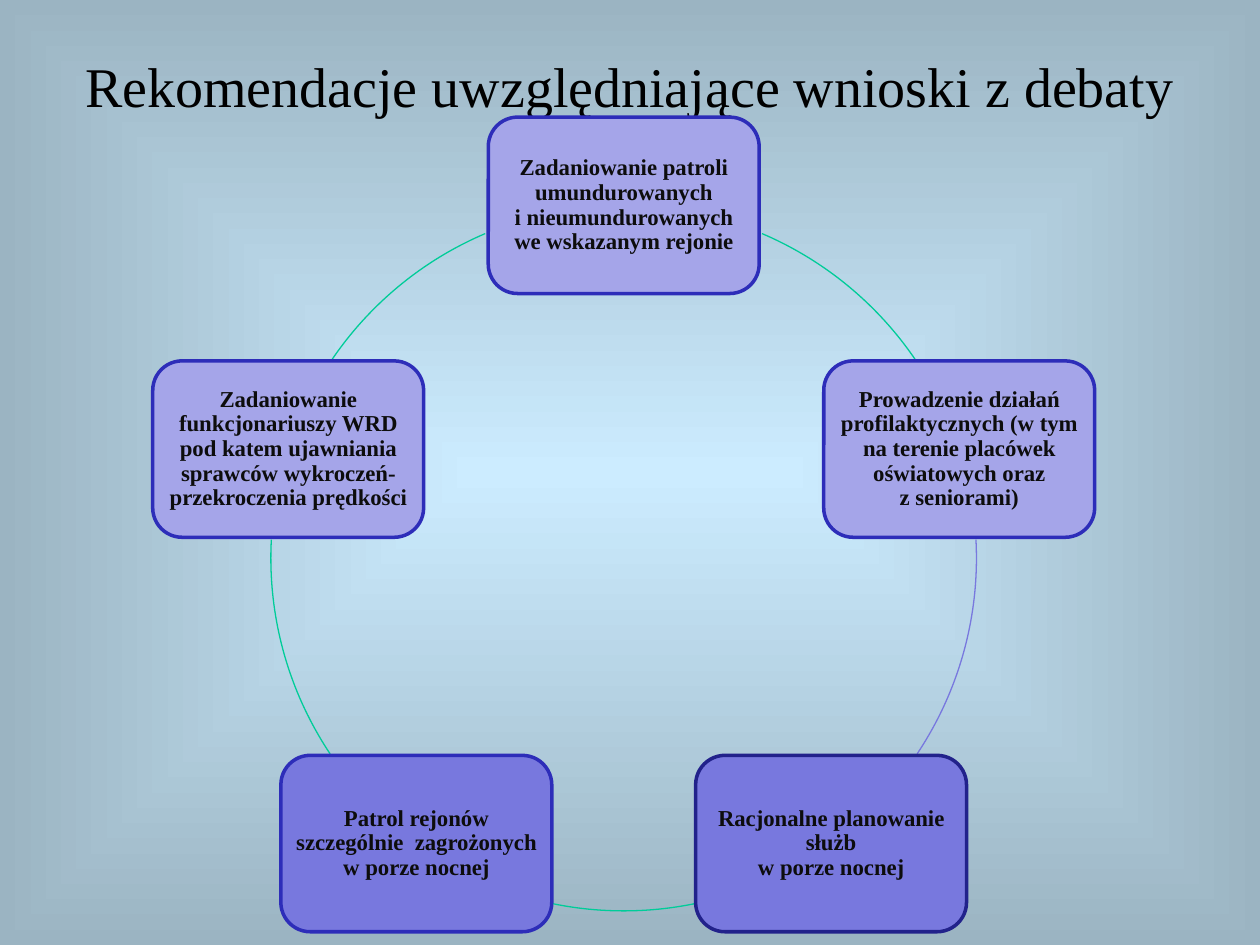
import math

import lxml.etree
import pptx
import pptx.dml.color
import pptx.enum.shapes
import pptx.enum.text
import pptx.oxml.ns
import pptx.util

Inches = pptx.util.Inches
Pt = pptx.util.Pt
SHAPE = pptx.enum.shapes.MSO_SHAPE
ANCHOR = pptx.enum.text.MSO_ANCHOR

FONT = "Times New Roman"
CENTER_X, CENTER_Y, RADIUS = 4.95, 4.43, 2.8
BOX_W, BOX_H = 2.15, 1.4
LIGHT, MEDIUM = "A5A5E9", "7878DE"
BLUE, NAVY, GREEN = "2D2DB9", "22228B", "00CC99"

# Clockwise from the top: text, fill, outline
BOXES = [
    ("Zadaniowanie patroli umundurowanych\vi nieumundurowanych we wskazanym rejonie",
     LIGHT, BLUE),
    ("Prowadzenie działań profilaktycznych (w tym na terenie placówek "
     "oświatowych oraz\vz seniorami)", LIGHT, BLUE),
    ("Racjonalne planowanie służb\vw porze nocnej", MEDIUM, NAVY),
    ("Patrol rejonów szczególnie  zagrożonych w porze nocnej", MEDIUM, BLUE),
    ("Zadaniowanie funkcjonariuszy WRD pod katem ujawniania sprawców wykroczeń- "
     "przekroczenia prędkości", LIGHT, BLUE),
]
# Start and end in degrees, clockwise from the right
ARCS = [
    (293.1, 325.8, GREEN),
    (357, 33.7, MEDIUM),
    (78.4, 101.6, GREEN),
    (146.3, 183, GREEN),
    (214.2, 246.9, GREEN),
]


def rgb(value):
    return pptx.dml.color.RGBColor.from_string(value)


def set_text(sp, text, size, color, bold=False, anchor=ANCHOR.MIDDLE,
             margin=0.1, top=0.05, spacing=1.0):
    tf = sp.text_frame
    tf.word_wrap = True
    tf.auto_size = pptx.enum.text.MSO_AUTO_SIZE.NONE
    tf.vertical_anchor = anchor
    tf.margin_left = tf.margin_right = Inches(margin)
    tf.margin_top = tf.margin_bottom = Inches(top)
    p = tf.paragraphs[0]
    p.text = text
    p.alignment = pptx.enum.text.PP_ALIGN.CENTER
    p.line_spacing = spacing
    for r in p.runs:
        r.font.name = FONT
        r.font.size = Pt(size)
        r.font.bold = bold
        r.font.color.rgb = rgb(color)


def set_background(s, inner, outer):
    """Fill the background with a gradient running from the centre outwards."""
    fill = s.background.fill
    fill.gradient()
    for stop, color in zip(fill.gradient_stops, (inner, outer)):
        stop.color.rgb = rgb(color)
    qn = pptx.oxml.ns.qn
    linear = s.element.find(".//" + qn("a:lin"))
    gradient = linear.getparent()
    gradient.remove(linear)
    shade = lxml.etree.SubElement(gradient, qn("a:path"), {"path": "shape"})
    lxml.etree.SubElement(shade, qn("a:fillToRect"),
                          {side: "50000" for side in "ltrb"})


def add_title(s, text):
    title = s.shapes.title
    title.left, title.top = Inches(0.5), Inches(0.3)
    title.width, title.height = Inches(9), Inches(1.25)
    set_text(title, text, 32, "000000", anchor=ANCHOR.TOP, top=0.11)


def add_arc(s, start, end, color):
    sp = s.shapes.add_shape(SHAPE.ARC, Inches(CENTER_X - RADIUS), Inches(CENTER_Y - RADIUS),
                            Inches(2 * RADIUS), Inches(2 * RADIUS))
    # Angles are stored in 60000ths of a degree, adjustments in 100000ths
    sp.adjustments[0], sp.adjustments[1] = start * 0.6, end * 0.6
    sp.shadow.inherit = False
    sp.fill.background()
    sp.line.color.rgb = rgb(color)
    sp.line.width = Pt(0.75)


def add_box(s, angle, text, fill, outline):
    """Add a rounded box centred on the circle at the given angle from the top."""
    x = CENTER_X + RADIUS * math.sin(angle)
    y = CENTER_Y - RADIUS * math.cos(angle)
    sp = s.shapes.add_shape(SHAPE.ROUNDED_RECTANGLE, Inches(x - BOX_W / 2),
                            Inches(y - BOX_H / 2), Inches(BOX_W), Inches(BOX_H))
    sp.shadow.inherit = False
    sp.fill.solid()
    sp.fill.fore_color.rgb = rgb(fill)
    sp.line.color.rgb = rgb(outline)
    sp.line.width = Pt(2)
    # The rounded outline already insets its text by about 0.07 inch
    set_text(sp, text, 13, "0D0D0D", bold=True, margin=0.05, spacing=0.9)


def main():
    prs = pptx.Presentation()
    prs.slide_width, prs.slide_height = Inches(10), Inches(7.5)
    s = prs.slides.add_slide(prs.slide_layouts.get_by_name("Title Only"))
    set_background(s, "CCECFF", "9BB4C2")
    add_title(s, "Rekomendacje uwzględniające wnioski z debaty")
    for arc in ARCS:
        add_arc(s, *arc)
    for i, box in enumerate(BOXES):
        add_box(s, 2 * math.pi * i / len(BOXES), *box)
    prs.save("out.pptx")


if __name__ == "__main__":
    main()
